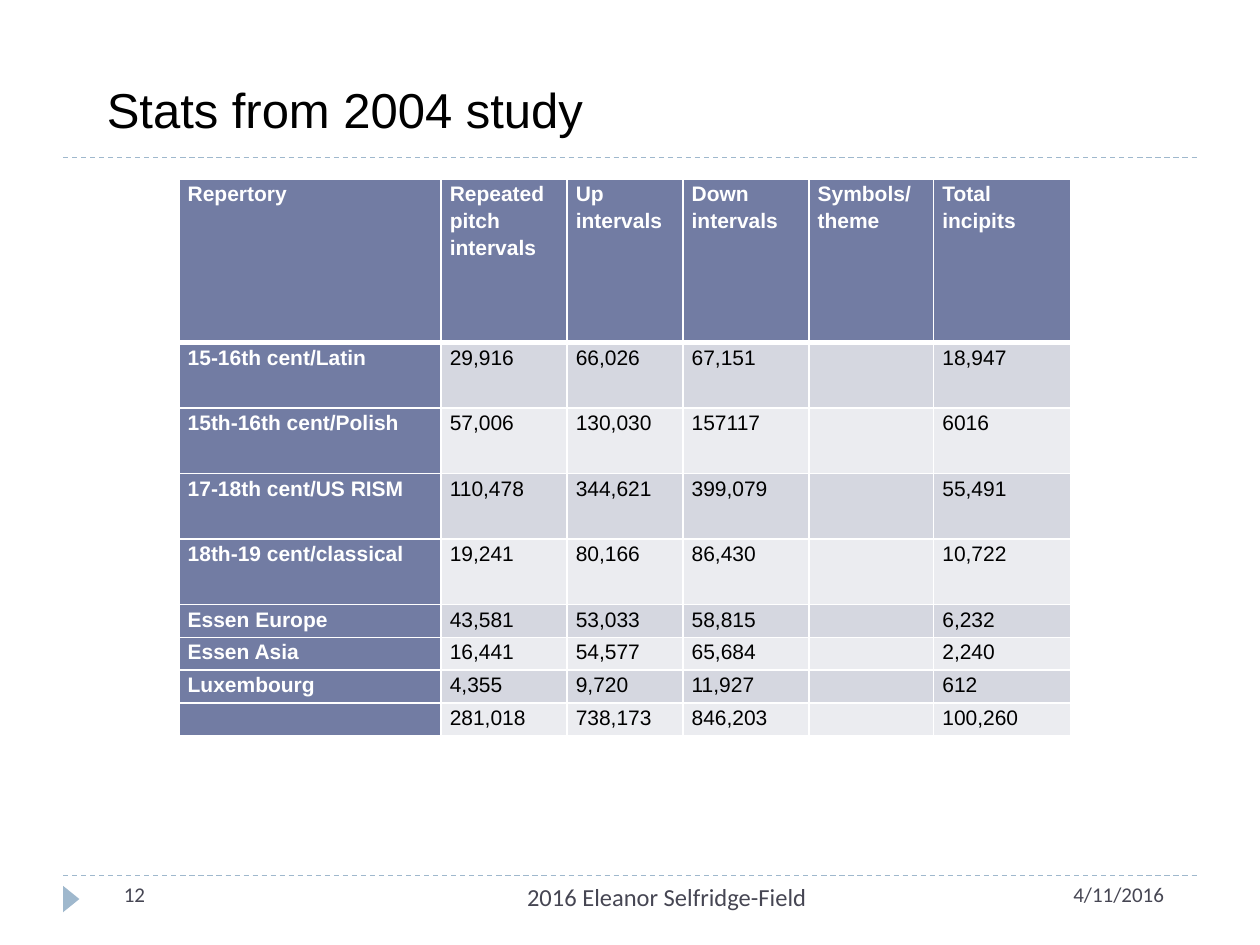
from typing import NamedTuple

from lxml import etree
from pptx import Presentation
from pptx import util as u
from pptx.dml.color import RGBColor
from pptx.enum import dml, shapes, text
from pptx.oxml import ns

COLORS = {
    "accent": "727CA3", "band": "D5D7E0", "pale": "EBECF0", "rule": "9FB8CD",
    "footer": "464653", "ink": "000000", "white": "FFFFFF",
}
SLIDE_W, SLIDE_H = u.Inches(10), u.Inches(7.5)


class Area(NamedTuple):
    """Left, top, width and height in percent of the slide."""
    left: float
    top: float
    width: float
    height: float

    def lengths(self) -> tuple:
        return (across(self.left), down(self.top), across(self.width), down(self.height))


class Label(NamedTuple):
    wording: str
    area: Area
    font: dict
    align: text.PP_ALIGN = text.PP_ALIGN.LEFT
    wrap: bool = True


def across(share: float) -> int:
    return round(SLIDE_W * share / 100)


def down(share: float) -> int:
    return round(SLIDE_H * share / 100)


def rgb(name: str) -> RGBColor:
    return RGBColor.from_string(COLORS[name])


def set_font(font, values: dict) -> None:
    for key, value in values.items():
        if key == "color":
            font.color.rgb = rgb(value)
        else:
            setattr(font, key, value)


def draw_rule(slide, top: float) -> None:
    rule = slide.shapes.add_connector(
        shapes.MSO_CONNECTOR.STRAIGHT, across(5), down(top), across(95), down(top))
    rule.line.color.rgb = rgb("rule")
    rule.line.width = u.Pt(0.75)
    rule.line.dash_style = dml.MSO_LINE.DASH
    etree.SubElement(rule._element.spPr, ns.qn("a:effectLst"))


def draw_label(slide, label: Label) -> None:
    frame = slide.shapes.add_textbox(*label.area.lengths()).text_frame
    frame.word_wrap = label.wrap
    if not label.wrap:
        frame.auto_size = text.MSO_AUTO_SIZE.SHAPE_TO_FIT_TEXT
    paragraph = frame.paragraphs[0]
    paragraph.alignment = label.align
    run = paragraph.add_run()
    run.text = label.wording
    set_font(run.font, label.font)


def draw_borders(cell, bottom: float) -> None:
    props = cell._tc.get_or_add_tcPr()
    widths = {"a:lnL": 1, "a:lnR": 1, "a:lnT": 1, "a:lnB": bottom}
    for position, (side, width) in enumerate(widths.items()):
        line = etree.Element(ns.qn(side), w=str(u.Pt(width)))
        fill = etree.SubElement(line, ns.qn("a:solidFill"))
        etree.SubElement(fill, ns.qn("a:srgbClr"), val=COLORS["white"])
        props.insert(position, line)


def fill_cell(cell, wording: str, fill: str, font: dict, bottom: float) -> None:
    margins = {"margin_left": 0.07, "margin_right": 0.07, "margin_top": 0, "margin_bottom": 0}
    for side, inches in margins.items():
        setattr(cell, side, u.Inches(inches))
    cell.fill.solid()
    cell.fill.fore_color.rgb = rgb(fill)
    draw_borders(cell, bottom)
    paragraph = cell.text_frame.paragraphs[0]
    paragraph.line_spacing = 1.15
    if wording:
        run = paragraph.add_run()
        run.text = wording
        set_font(run.font, font)
    else:
        # The end mark keeps an empty cell from stretching its row
        etree.SubElement(paragraph._p, ns.qn("a:endParaRPr"), sz=str(int(font["size"].pt * 100)))


def draw_table(slide, area: Area, column_shares: list, row_units: list, rows: list) -> None:
    left, top, width, height = area.lengths()
    table = slide.shapes.add_table(len(rows), len(rows[0]), left, top, width, height).table
    table.horz_banding = False
    for column, share in zip(table.columns, column_shares):
        column.width = round(width * share / sum(column_shares))
    for row, units in zip(table.rows, row_units):
        row.height = round(height * units / sum(row_units))
    body = {"size": u.Pt(12), "name": "Arial", "color": "ink", "bold": False}
    heading = {**body, "color": "white", "bold": True}
    for r, row in enumerate(rows):
        for c, wording in enumerate(row):
            is_heading = r == 0 or c == 0
            fill = "accent" if is_heading else ("band" if r % 2 else "pale")
            fill_cell(table.cell(r, c), wording, fill,
                      heading if is_heading else body, 3 if r == 0 else 1)


STATS = [
    ["Repertory", "Repeated pitch intervals", "Up intervals", "Down intervals",
     "Symbols/theme", "Total incipits"],
    ["15-16th cent/Latin", "29,916", "66,026", "67,151", "", "18,947"],
    ["15th-16th cent/Polish", "57,006", "130,030", "157117", "", "6016"],
    ["17-18th cent/US RISM", "110,478", "344,621", "399,079", "", "55,491"],
    ["18th-19 cent/classical", "19,241", "80,166", "86,430", "", "10,722"],
    ["Essen Europe", "43,581", "53,033", "58,815", "", "6,232"],
    ["Essen Asia", "16,441", "54,577", "65,684", "", "2,240"],
    ["Luxembourg", "4,355", "9,720", "11,927", "", "612"],
    ["", "281,018", "738,173", "846,203", "", "100,260"],
]
COLUMN_SHARES = [2.08, 1, 0.92, 1, 0.99, 1.09]
ROW_UNITS = [5] + [2] * 4 + [1] * 4

FOOTER_TOP, FOOTER_HEIGHT = 92.67, 5.33
SMALL = {"size": u.Pt(12), "name": "Calibri", "color": "footer"}
LABELS = [
    Label("Stats from 2004 study", Area(7.5, 7.73, 40.3, 7.6),
          {"size": u.Pt(28), "name": "Arial", "color": "ink"}, wrap=False),
    Label("4/11/2016", Area(84.2, FOOTER_TOP, 10.8, FOOTER_HEIGHT), SMALL),
    Label("2016 Eleanor Selfridge-Field", Area(31.7, FOOTER_TOP, 33.3, FOOTER_HEIGHT),
          {**SMALL, "size": u.Pt(14)}, text.PP_ALIGN.RIGHT),
    Label("12", Area(6.7, FOOTER_TOP, 5.8, FOOTER_HEIGHT), SMALL, text.PP_ALIGN.RIGHT),
]


def main() -> None:
    deck = Presentation()
    deck.slide_width, deck.slide_height = SLIDE_W, SLIDE_H
    slide = deck.slides.add_slide(deck.slide_layouts[6])

    # Dashed rules and page marker
    for top in (FOOTER_TOP, 16.67):
        draw_rule(slide, top)
    marker = slide.shapes.add_shape(
        shapes.MSO_SHAPE.ISOSCELES_TRIANGLE, *Area(4.6, 94.27, 2.1, 1.73).lengths())
    marker.rotation = 90
    marker.shadow.inherit = False
    marker.fill.solid()
    marker.fill.fore_color.rgb = rgb("rule")
    marker.line.fill.background()

    # Statistics by repertory
    draw_table(slide, Area(14.2, 18.93, 70.8, 58.93), COLUMN_SHARES, ROW_UNITS, STATS)

    # Title and footer
    for label in LABELS:
        draw_label(slide, label)

    deck.save("out.pptx")


if __name__ == "__main__":
    main()
